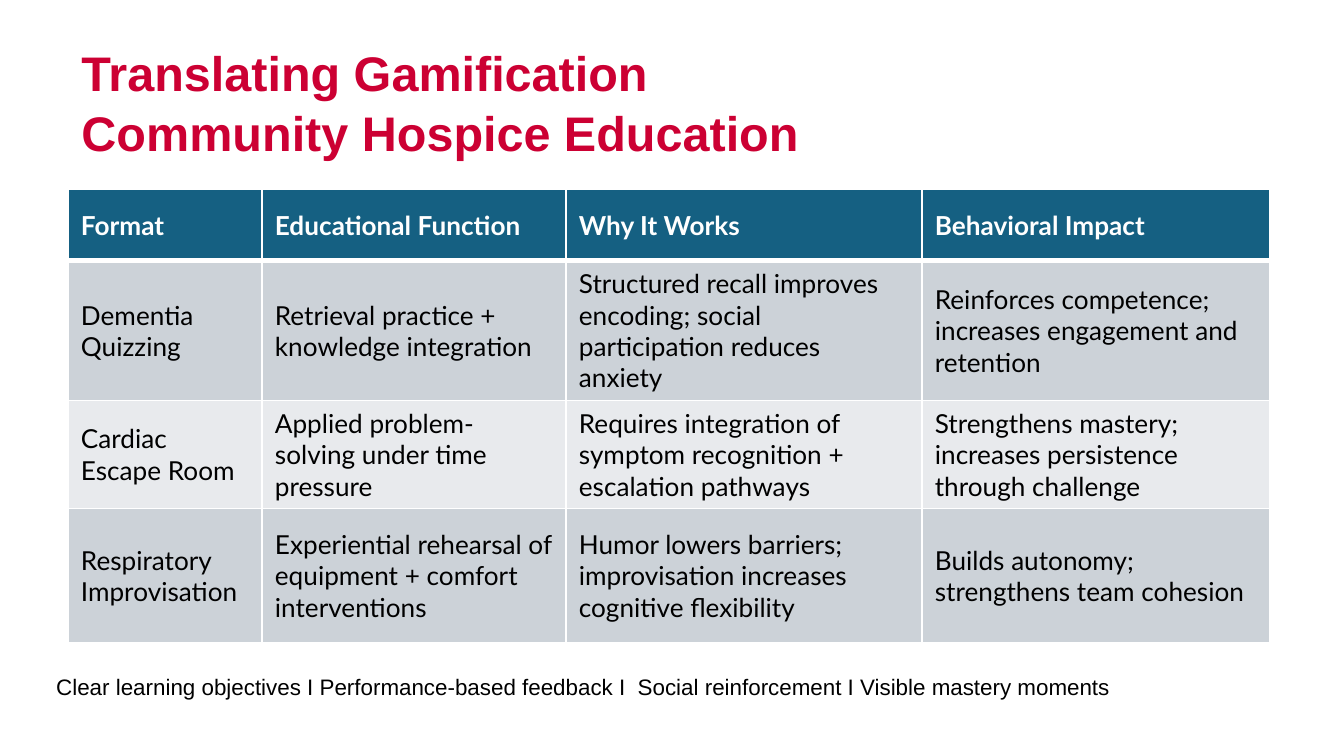
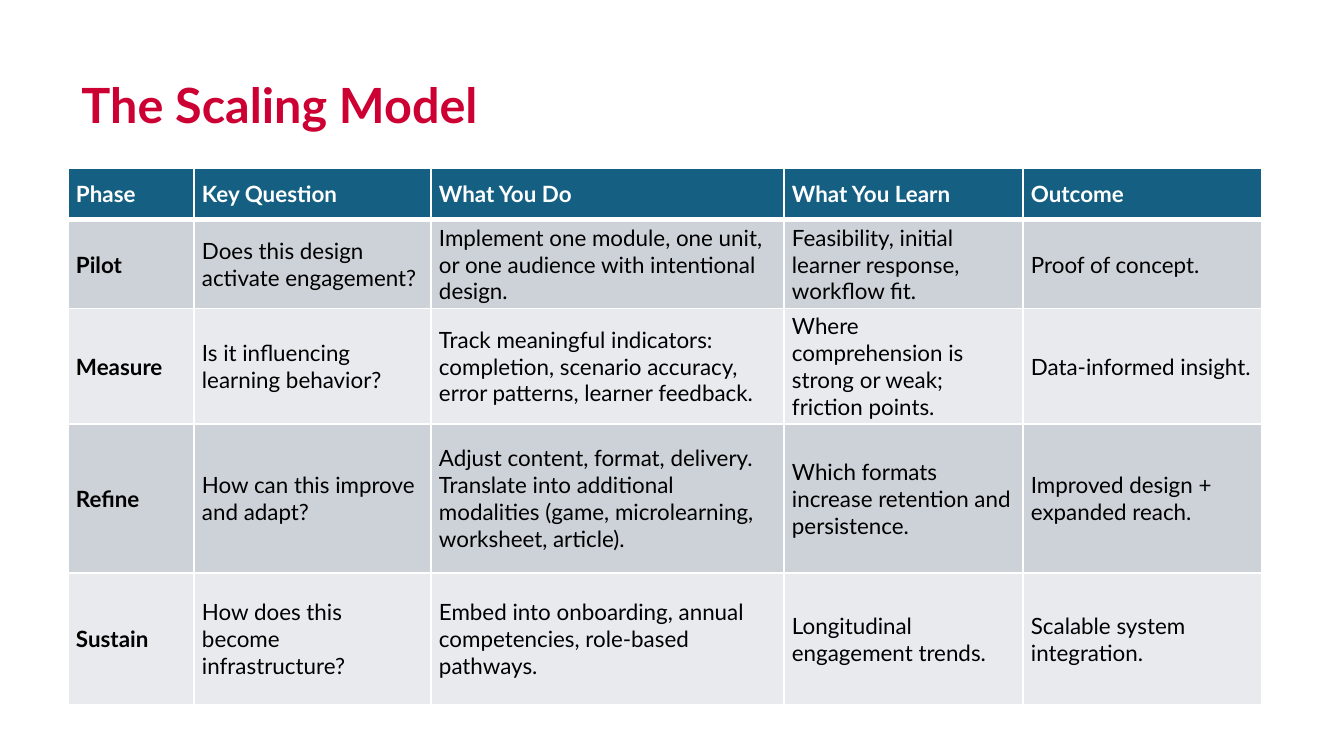
from dataclasses import dataclass

from lxml import etree
from pptx import Presentation
from pptx.dml.color import RGBColor
from pptx.enum.text import MSO_ANCHOR, MSO_AUTO_SIZE, PP_ALIGN
from pptx.oxml.ns import qn
from pptx.util import Pt

EMU_PER_PX = 914400 / 134.4
TITLE_ONLY = 5
LEFT = PP_ALIGN.LEFT
MIDDLE = MSO_ANCHOR.MIDDLE
BOTTOM = MSO_ANCHOR.BOTTOM
FIT_SHAPE = MSO_AUTO_SIZE.SHAPE_TO_FIT_TEXT
NO_FIT = MSO_AUTO_SIZE.NONE


@dataclass(frozen=True)
class Theme:
    red: str = "CC0033"
    header: str = "156082"
    bands: tuple = ("CCD2D8", "E8EAED")
    white: str = "FFFFFF"
    black: str = "000000"
    sans: str = "Arial"
    lato: str = "Lato"
    title_size: int = 26
    large_size: int = 14
    small_size: int = 12
    thin_border: int = 1
    thick_border: int = 3


THEME = Theme()

# Slide content: the first row of each table is its header
FORMATS = [
    ["Format", "Educational Function", "Why It Works", "Behavioral Impact"],
    ["Dementia Quizzing",
     "Retrieval practice + knowledge integration",
     "Structured recall improves encoding; social participation reduces anxiety",
     "Reinforces competence; increases engagement and retention"],
    ["Cardiac Escape Room",
     "Applied problem-solving under time pressure",
     "Requires integration of symptom recognition + escalation pathways",
     "Strengthens mastery; increases persistence through challenge"],
    ["Respiratory Improvisation",
     "Experiential rehearsal of equipment + comfort interventions",
     "Humor lowers barriers; improvisation increases cognitive flexibility",
     "Builds autonomy; strengthens team cohesion"],
]
PHASES = [
    ["Phase", "Key Question", "What You Do", "What You Learn", "Outcome"],
    ["Pilot",
     "Does this design activate engagement?",
     "Implement one module, one unit, or one audience with intentional design.",
     "Feasibility, initial learner response, workflow fit.",
     "Proof of concept."],
    ["Measure",
     "Is it influencing learning behavior?",
     "Track meaningful indicators: completion, scenario accuracy, "
     "error patterns, learner feedback.",
     "Where comprehension is strong or weak; friction points.",
     "Data-informed insight."],
    ["Refine",
     "How can this improve and adapt?",
     "Adjust content, format, delivery. Translate into additional modalities "
     "(game, microlearning, worksheet, article).",
     "Which formats increase retention and persistence.",
     "Improved design + expanded reach."],
    ["Sustain",
     "How does this become infrastructure?",
     "Embed into onboarding, annual competencies, role-based pathways.",
     "Longitudinal engagement trends.",
     "Scalable system integration."],
]
PRINCIPLES = ("Clear learning objectives I Performance-based feedback I  "
              "Social reinforcement I Visible mastery moments")


def px(length):
    return round(length * EMU_PER_PX)


def add_run(paragraph, text, font_name, size, color, bold=False):
    run = paragraph.add_run()
    run.text = text
    run.font.name = font_name
    run.font.size = Pt(size)
    run.font.bold = bold
    run.font.color.rgb = RGBColor.from_string(color)


def add_titled_slide(presentation, lines, top, font_name):
    slide = presentation.slides.add_slide(presentation.slide_layouts[TITLE_ONLY])
    title = slide.shapes.title
    title.left, title.top, title.width, title.height = map(px, (68, top, 982, 120))
    frame = title.text_frame
    frame.word_wrap = True
    frame.auto_size = NO_FIT
    frame.vertical_anchor = BOTTOM
    paragraph = frame.paragraphs[0]
    paragraph.alignment = LEFT
    paragraph.line_spacing = 1.04
    for index, line in enumerate(lines):
        if index:
            paragraph.add_line_break()
        add_run(paragraph, line, font_name, THEME.title_size, THEME.red, True)
    return slide


def add_border(cell, side, width):
    line = etree.SubElement(cell._tc.get_or_add_tcPr(), qn(f"a:ln{side}"), w=str(Pt(width)))
    fill = etree.SubElement(line, qn("a:solidFill"))
    etree.SubElement(fill, qn("a:srgbClr"), val=THEME.white)


def format_cell(cell, row, fill_color, margins):
    # Borders precede the fill in the cell properties
    thick_sides = {0: "B", 1: "T"}
    for side in "LRTB":
        thick = thick_sides.get(row) == side
        add_border(cell, side, THEME.thick_border if thick else THEME.thin_border)
    cell.fill.solid()
    cell.fill.fore_color.rgb = RGBColor.from_string(fill_color)
    cell.vertical_anchor = MIDDLE
    horizontal, vertical = map(px, margins)
    cell.margin_left = cell.margin_right = horizontal
    cell.margin_top = cell.margin_bottom = vertical


def add_banded_table(slide, rows, top, widths, heights, size, margins, bold_labels=False):
    frame = slide.shapes.add_table(
        len(rows), len(widths), px(68), px(top), px(sum(widths)), px(sum(heights)))
    table = frame.table
    table.horz_banding = False
    for column, width in zip(table.columns, widths):
        column.width = px(width)
    for table_row, height in zip(table.rows, heights):
        table_row.height = px(height)
    for row, texts in enumerate(rows):
        is_header = row == 0
        fill_color = THEME.header if is_header else THEME.bands[(row - 1) % 2]
        text_color = THEME.white if is_header else THEME.black
        for column, text in enumerate(texts):
            cell = table.cell(row, column)
            format_cell(cell, row, fill_color, margins)
            bold = is_header or (bold_labels and column == 0)
            add_run(cell.text_frame.paragraphs[0], text, THEME.lato, size, text_color, bold)


def add_caption(slide, text):
    shape = slide.shapes.add_textbox(px(43), px(667), px(1191), px(40))
    frame = shape.text_frame
    frame.word_wrap = True
    frame.auto_size = FIT_SHAPE
    add_run(frame.paragraphs[0], text, THEME.sans, THEME.small_size, THEME.black)


def main():
    presentation = Presentation()
    presentation.slide_width = px(1344)
    presentation.slide_height = px(756)

    # Gamification formats
    slide = add_titled_slide(
        presentation, ["Translating Gamification", "Community Hospice Education"],
        48, THEME.sans)
    add_banded_table(slide, FORMATS, 189, [194, 304, 356, 348], [72, 134, 104, 134],
                     THEME.large_size, (13, 7))
    add_caption(slide, PRINCIPLES)

    # Scaling phases
    slide = add_titled_slide(presentation, ["The Scaling Model"], 20, THEME.lato)
    add_banded_table(slide, PHASES, 168, [126, 237, 353, 239, 239],
                     [52, 77, 102, 149, 132], THEME.small_size, (8, 4), bold_labels=True)

    presentation.save("out.pptx")


if __name__ == "__main__":
    main()
